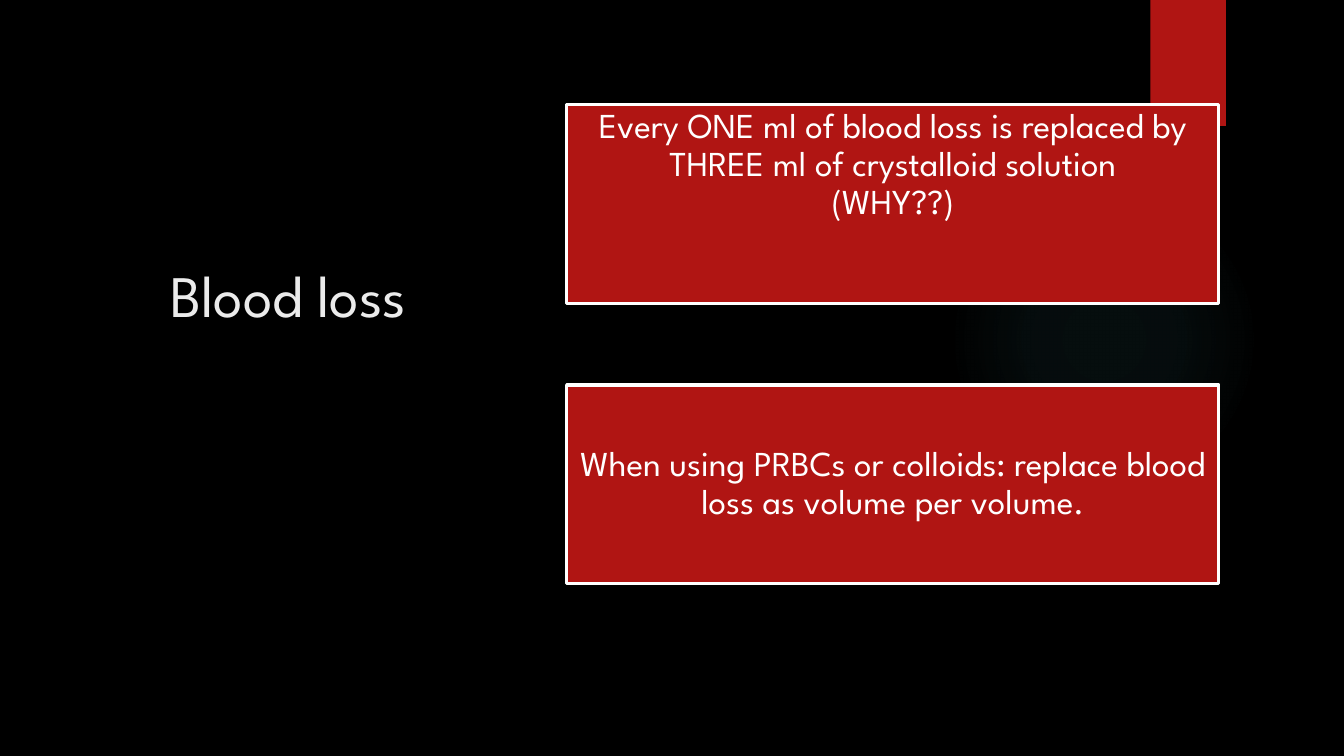
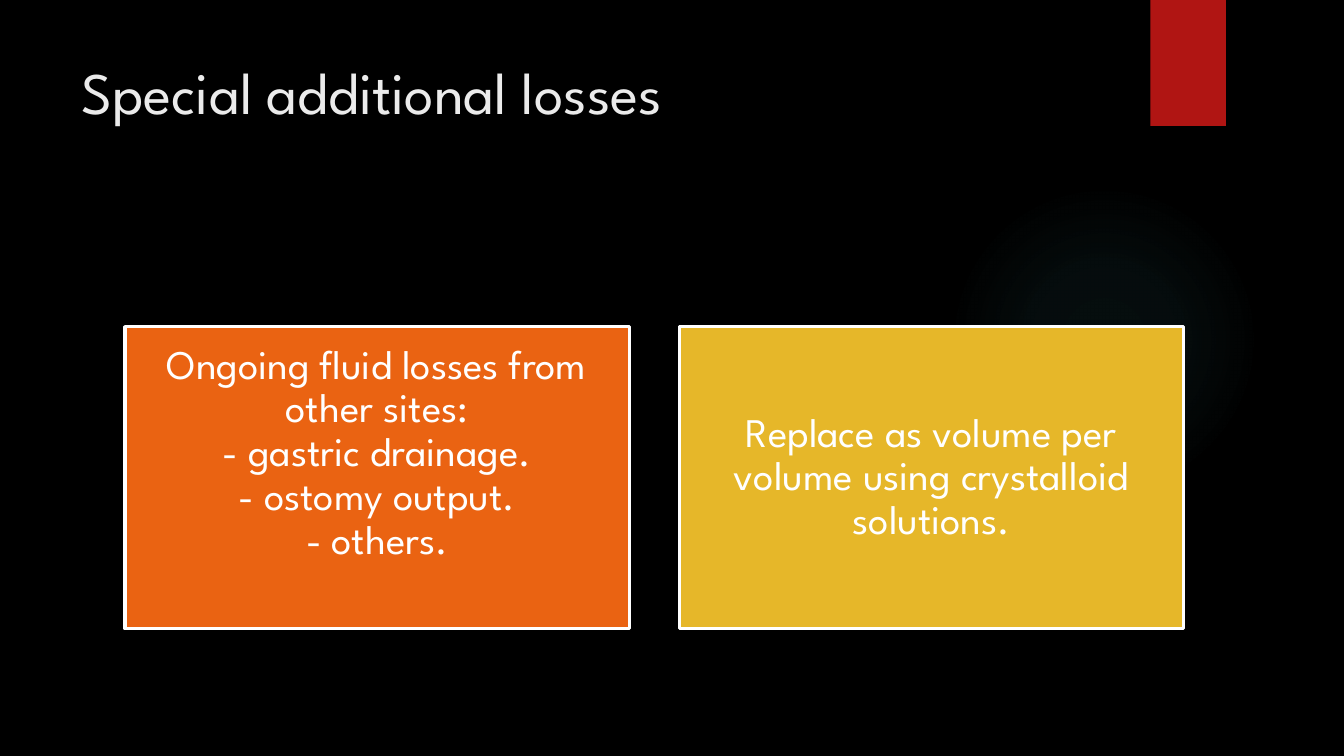
from pptx import Presentation
from pptx.dml.color import RGBColor as RGB
from pptx.enum.shapes import MSO_SHAPE as Kind
from pptx.enum.text import MSO_ANCHOR as Anchor, PP_ALIGN as Align
from pptx.oxml import parse_xml
from pptx.oxml.ns import nsdecls
from pptx.util import Pt

PX = 9144  # 100 px to the inch
FONT = "League Spartan"
HUES = {"back": "000000", "red": "B01513", "orange": "EA6312",
        "gold": "E6B729", "title": "EBEBEB", "white": "FFFFFF",
        "glow": "50B9C1"}
GLOW = [(0, 7), (36, 6), (69, 0)]  # position and opacity, in percent

# Cards run from "start" in steps of "step"; "lift" raises a card's text.
SLIDES = [
    {"title": "Blood loss", "box": (159, 252, 358, 292),
     "start": (562, 104), "step": (0, 278), "size": (647, 197),
     "pad": 2, "pt": 25,
     "cards": [
         ("red", 77, ["Every ONE ml of blood loss is replaced by "
                      "THREE ml of crystalloid solution", "(WHY??)"]),
         ("red", 0, ["When using PRBCs or colloids: replace blood "
                     "loss as volume per volume."])]},
    {"title": "Special additional losses", "box": (71, 50, 1029, 153),
     "start": (124, 324), "step": (550, 0), "size": (500, 300),
     "pad": 12, "pt": 29,
     "cards": [
         ("orange", 48, ["Ongoing fluid losses from other sites:",
                         "- gastric drainage.", "- ostomy output.",
                         "- others."]),
         ("gold", 0, ["Replace as volume per volume using "
                      "crystalloid solutions."])]},
]


def hue(name):
    return RGB.from_string(HUES[name])


def emu(*vals):
    return [v * PX for v in vals]


def add_shape(slide, kind, box, fill):
    shape = slide.shapes.add_shape(kind, *emu(*box))
    shape.shadow.inherit = False
    shape.fill.solid()
    shape.fill.fore_color.rgb = hue(fill)
    shape.line.fill.background()
    return shape


def write(frame, lines, size, color, align, space=1.0):
    frame.word_wrap = True
    for i, line in enumerate(lines):
        para = frame.add_paragraph() if i else frame.paragraphs[0]
        para.alignment = align
        para.line_spacing = space
        run = para.add_run()
        run.text = line
        run.font.name = FONT
        run.font.size = Pt(size)
        run.font.color.rgb = hue(color)


def add_glow(slide):
    """Draw the faint round light behind the content."""
    ball = add_shape(slide, Kind.OVAL, (941, 183, 308, 308), "glow")
    stops = "".join(
        f'<a:gs pos="{pos * 1000}"><a:srgbClr val="{HUES["glow"]}">'
        f'<a:alpha val="{alpha * 1000}"/></a:srgbClr></a:gs>'
        for pos, alpha in GLOW)
    grad = parse_xml(
        f'<a:gradFill {nsdecls("a")}><a:gsLst>{stops}</a:gsLst>'
        '<a:path path="circle"><a:fillToRect l="50000" t="50000" '
        'r="50000" b="50000"/></a:path></a:gradFill>')
    props = ball._element.spPr
    props.replace(props.find(grad.tag.replace("gradFill", "solidFill")), grad)


def add_base(deck):
    slide = deck.slides.add_slide(deck.slide_layouts[6])
    slide.background.fill.solid()
    slide.background.fill.fore_color.rgb = hue("back")
    add_glow(slide)
    add_shape(slide, Kind.RECTANGLE, (1141, 0, 75, 125), "red")
    return slide


def add_card(slide, box, fill, lines, size, pad, lift):
    card = add_shape(slide, Kind.RECTANGLE, box, fill)
    card.line.color.rgb = hue("white")
    card.line.width = Pt(2.25)
    frame = card.text_frame
    frame.vertical_anchor = Anchor.MIDDLE
    frame.margin_left = frame.margin_right = frame.margin_top = pad * PX
    frame.margin_bottom = (pad + lift) * PX
    write(frame, lines, size, "white", Align.CENTER, 0.9)


def main():
    deck = Presentation()
    deck.slide_width, deck.slide_height = emu(1333, 750)
    for page in SLIDES:
        slide = add_base(deck)
        title = slide.shapes.add_textbox(*emu(*page["box"]))
        write(title.text_frame, [page["title"]], 42, "title", Align.LEFT)
        (x, y), (dx, dy) = page["start"], page["step"]
        for i, (fill, lift, lines) in enumerate(page["cards"]):
            box = (x + i * dx, y + i * dy, *page["size"])
            add_card(slide, box, fill, lines, page["pt"], page["pad"], lift)
    deck.save("out.pptx")


if __name__ == "__main__":
    main()
